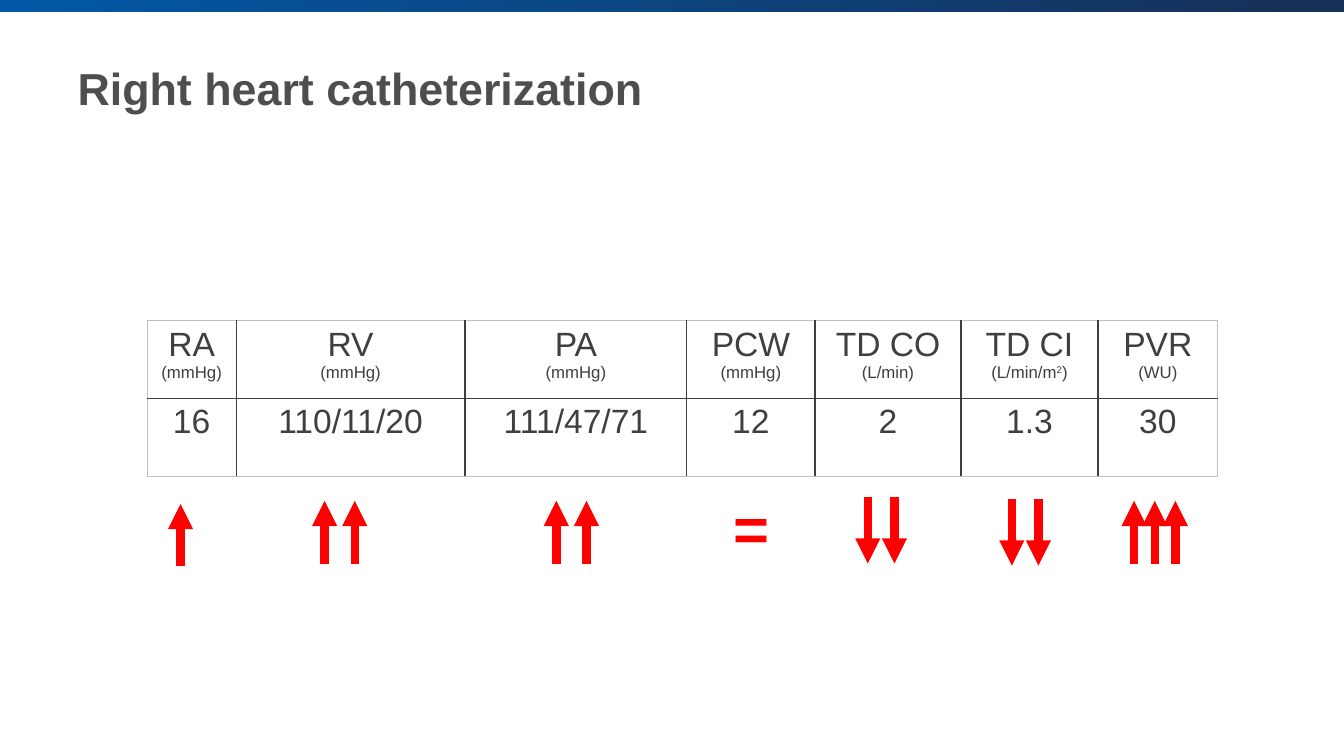
from lxml.etree import SubElement
from pptx import Presentation
from pptx.dml.color import RGBColor
from pptx.enum.shapes import MSO_CONNECTOR, MSO_SHAPE
from pptx.enum.text import MSO_ANCHOR, MSO_AUTO_SIZE, PP_ALIGN
from pptx.oxml.ns import qn
from pptx.util import Cm, Pt

BLUE = RGBColor(0x02, 0x58, 0xA6)
NAVY = RGBColor(0x17, 0x30, 0x57)
TITLE_GREY = RGBColor(0x4D, 0x4E, 0x4D)
DARK_GREY = RGBColor(0x3F, 0x3F, 0x3F)
LIGHT_GREY = RGBColor(0xBF, 0xBF, 0xBF)
RED = RGBColor(0xFF, 0x00, 0x00)


def style(paragraph, size, color, bold=False, align=PP_ALIGN.LEFT):
    paragraph.alignment = align
    font = paragraph.font
    font.name, font.size, font.bold = "Arial", Pt(size), bold
    font.color.rgb = color


def add_border(cell, side, color):
    line = SubElement(cell._tc.get_or_add_tcPr(), qn(f"a:{side}"), w=str(Pt(1)))
    fill = SubElement(line, qn("a:solidFill"))
    SubElement(fill, qn("a:srgbClr"), val=str(color))


prs = Presentation()
prs.slide_width, prs.slide_height = Cm(33.87), Cm(19.05)
slide = prs.slides.add_slide(prs.slide_layouts[5])
shapes = slide.shapes

# Top band
band = shapes.add_shape(MSO_SHAPE.RECTANGLE, 0, 0, prs.slide_width, Cm(0.3))
band.shadow.inherit = False
band.line.fill.background()
band.fill.gradient()
band.fill.gradient_angle = 0
for stop, color in zip(band.fill.gradient_stops, (BLUE, NAVY)):
    stop.color.rgb = color

# Title
title = shapes.title
title.left, title.top, title.width, title.height = Cm(1.7), Cm(0.56), Cm(29.85), Cm(3.3)
title.text_frame.text = "Right heart catheterization"
title.text_frame.auto_size = MSO_AUTO_SIZE.NONE
title.text_frame.vertical_anchor = MSO_ANCHOR.MIDDLE
style(title.text_frame.paragraphs[0], 32, TITLE_GREY, bold=True)

# Measurements: name, unit, superscript in unit, value, column width
measurements = [
    ("RA", "(mmHg)", "", "16", 2.24),
    ("RV", "(mmHg)", "", "110/11/20", 5.77),
    ("PA", "(mmHg)", "", "111/47/71", 5.59),
    ("PCW", "(mmHg)", "", "12", 3.23),
    ("TD CO", "(L/min)", "", "2", 3.68),
    ("TD CI", "(L/min/m)", "2", "1.3", 3.45),
    ("PVR", "(WU)", "", "30", 3.02),
]
last = len(measurements) - 1
table = shapes.add_table(2, last + 1, Cm(3.71), Cm(8.08), Cm(26.98), Cm(3.92)).table
table.first_row = table.horz_banding = False
for row in table.rows:
    row.height = Cm(1.96)

for col, (name, unit, power, value, width) in enumerate(measurements):
    table.columns[col].width = Cm(width)
    header, result = table.cell(0, col), table.cell(1, col)
    header.text, result.text = name, value
    unit_line = header.text_frame.add_paragraph()
    if power:
        unit_line.add_run().text = unit[:-1]
        superscript = unit_line.add_run()
        superscript.text = power
        superscript._r.get_or_add_rPr().set("baseline", "30000")
        unit_line.add_run().text = unit[-1]
    else:
        unit_line.text = unit
    style(unit_line, 12, DARK_GREY, align=PP_ALIGN.CENTER)

    for cell in (header, result):
        style(cell.text_frame.paragraphs[0], 24, DARK_GREY, align=PP_ALIGN.CENTER)
        outer_edges = {"lnL": col == 0, "lnR": col == last,
                       "lnT": cell is header, "lnB": cell is result}
        for side, is_outer in outer_edges.items():
            add_border(cell, side, LIGHT_GREY if is_outer else DARK_GREY)
        cell.fill.background()

# Trend arrows: first x, count, pitch, start y, tip y
trends = [
    (4.55, 1, 0, 14.27, 12.7),
    (8.18, 2, 0.76, 14.2, 12.62),
    (14.02, 2, 0.76, 14.2, 12.62),
    (21.87, 2, 0.67, 12.52, 14.2),
    (25.5, 2, 0.67, 12.57, 14.25),
    (28.58, 3, 0.52, 14.2, 12.62),
]
for first_x, count, pitch, start, tip in trends:
    for i in range(count):
        x = Cm(first_x + i * pitch)
        arrow = shapes.add_connector(MSO_CONNECTOR.STRAIGHT, x, Cm(start), x, Cm(tip))
        arrow.line.color.rgb = RED
        arrow.line.width = Pt(6)
        SubElement(arrow.line._get_or_add_ln(), qn("a:tailEnd"), type="triangle")
        SubElement(arrow._element.spPr, qn("a:effectLst"))

# Unchanged sign under PCW
unchanged = shapes.add_textbox(Cm(18.24), Cm(12.22), Cm(1.42), Cm(2.13)).text_frame
unchanged.word_wrap = False
unchanged.auto_size = MSO_AUTO_SIZE.SHAPE_TO_FIT_TEXT
unchanged.text = "="
style(unchanged.paragraphs[0], 44, RED, bold=True)

prs.save("out.pptx")
